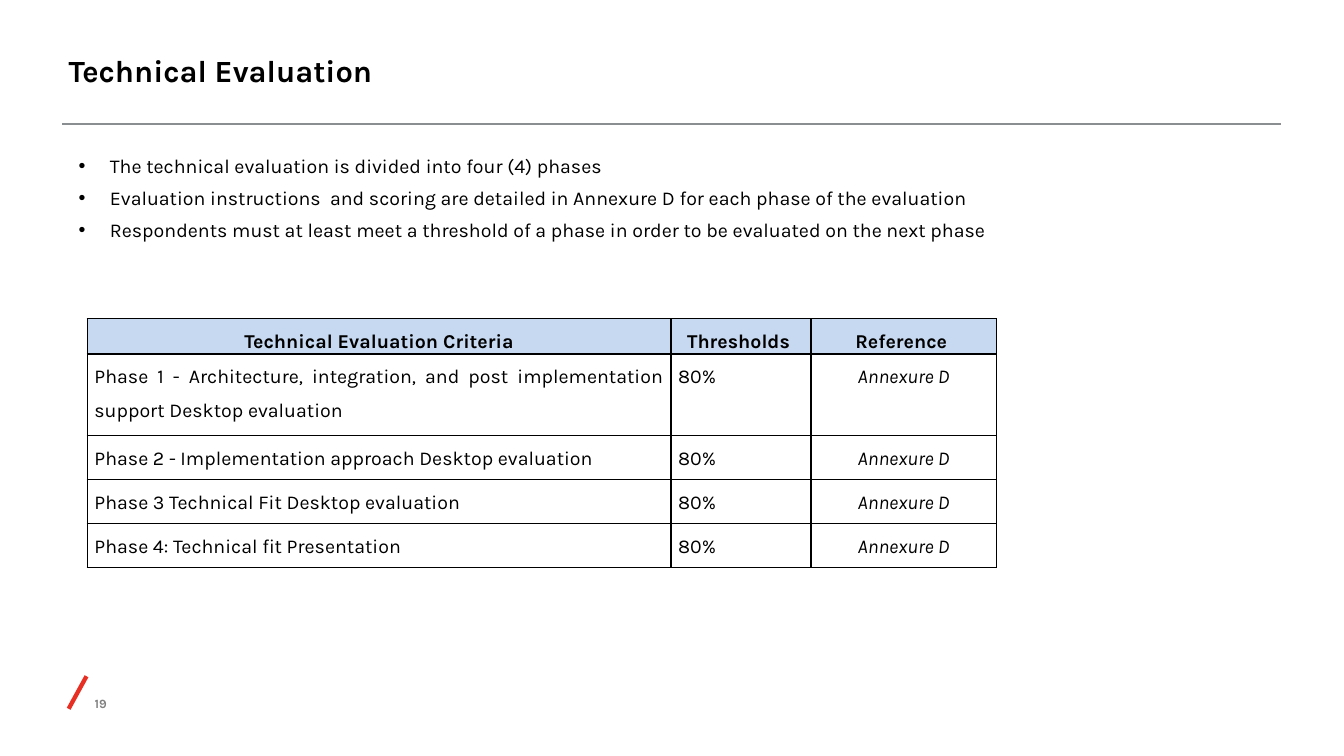
from lxml.etree import SubElement
from pptx import Presentation
from pptx.dml.color import RGBColor
from pptx.enum.shapes import MSO_CONNECTOR
from pptx.enum.text import MSO_ANCHOR, PP_ALIGN
from pptx.oxml.ns import qn
from pptx.util import Cm, Pt

# Content
TITLE = "Technical Evaluation"
BULLETS = [
    "The technical evaluation is divided into four (4) phases",
    "Evaluation instructions  and scoring are detailed in Annexure D for each phase of the evaluation",
    "Respondents must at least meet a threshold of a phase in order to be evaluated on the next phase",
]
HEADER = ("Technical Evaluation Criteria", "Thresholds ", "Reference ")
PHASES = [
    "Phase 1 - Architecture, integration, and post implementation support Desktop evaluation",
    "Phase 2 - Implementation approach Desktop evaluation",
    "Phase 3 Technical Fit Desktop evaluation",
    "Phase 4: Technical fit Presentation",
]
ROWS = [HEADER] + [(phase, "80%", "Annexure D") for phase in PHASES]
PAGE = "19"

FONT = "Karla"
COLORS = {"text": "000000", "page": "808080", "rule": "8B8E91",
          "slash": "E73023", "header": "C6D9F1", "border": "000000"}
COL_WIDTHS = (14.71, 3.53, 4.67)
ROW_HEIGHTS = (0.86, 2.06, 1.11, 1.11, 1.11)


def rgb(name):
    return RGBColor.from_string(COLORS[name])


def add_run(p, text, size, color="text", bold=False, italic=False):
    r = p.add_run()
    r.text = text
    r.font.name, r.font.size = FONT, Pt(size)
    r.font.bold, r.font.italic = bold, italic
    r.font.color.rgb = rgb(color)


def set_margins(tf, left=0, top=0, right=0, bottom=0):
    tf.margin_left, tf.margin_top = Cm(left), Cm(top)
    tf.margin_right, tf.margin_bottom = Cm(right), Cm(bottom)


def add_line(s, x1, y1, x2, y2, color, width):
    line = s.shapes.add_connector(MSO_CONNECTOR.STRAIGHT, Cm(x1), Cm(y1), Cm(x2), Cm(y2))
    line.line.color.rgb = rgb(color)
    line.line.width = Pt(width)
    SubElement(line._element.spPr, qn("a:effectLst"))


def add_borders(cell):
    tcPr = cell._tc.get_or_add_tcPr()
    for side in ("lnL", "lnR", "lnT", "lnB"):
        ln = SubElement(tcPr, qn(f"a:{side}"), w=str(Pt(1)))
        fill = SubElement(ln, qn("a:solidFill"))
        SubElement(fill, qn("a:srgbClr"), val=COLORS["border"])


prs = Presentation()
prs.slide_width, prs.slide_height = Cm(33.87), Cm(19.05)
s = prs.slides.add_slide(prs.slide_layouts[5])

# Title
title = s.shapes.title
title.left, title.top, title.width, title.height = Cm(1.73), Cm(0.76), Cm(29.06), Cm(2.01)
tf = title.text_frame
tf.vertical_anchor = MSO_ANCHOR.MIDDLE
set_margins(tf)
p = tf.paragraphs[0]
p.alignment = PP_ALIGN.LEFT
add_run(p, TITLE, 22, bold=True)

# Rule under the title and red slash in the footer
add_line(s, 1.57, 3.12, 32.28, 3.12, "rule", 1.65)
add_line(s, 1.73, 17.86, 2.18, 17.04, "slash", 3.05)

# Page number
tf = s.shapes.add_textbox(Cm(1.24), Cm(17.48), Cm(1.45), Cm(0.58)).text_frame
tf.word_wrap = True
tf.vertical_anchor = MSO_ANCHOR.BOTTOM
set_margins(tf, bottom=0.13)
p = tf.paragraphs[0]
p.alignment = PP_ALIGN.RIGHT
add_run(p, PAGE, 9, "page", bold=True)

# Bullets
tf = s.shapes.add_textbox(Cm(1.73), Cm(3.76), Cm(31.6), Cm(3.3)).text_frame
tf.word_wrap = True
for i, text in enumerate(BULLETS):
    p = tf.add_paragraph() if i else tf.paragraphs[0]
    p.alignment = PP_ALIGN.JUSTIFY
    if i:
        p.space_before = Pt(6)
    pPr = p._p.get_or_add_pPr()
    pPr.set("marL", str(Cm(0.79)))
    pPr.set("indent", str(-Cm(0.79)))
    SubElement(pPr, qn("a:buFont"), typeface="Arial")
    SubElement(pPr, qn("a:buChar"), char="•")
    add_run(p, text, 14)

# Table of phases
table = s.shapes.add_table(len(ROWS), len(HEADER), Cm(2.2), Cm(8.03),
                           Cm(sum(COL_WIDTHS)), Cm(sum(ROW_HEIGHTS))).table
table.first_row = table.horz_banding = False
for col, width in zip(table.columns, COL_WIDTHS):
    col.width = Cm(width)
for row, height in zip(table.rows, ROW_HEIGHTS):
    row.height = Cm(height)

for i, values in enumerate(ROWS):
    for j, text in enumerate(values):
        cell = table.cell(i, j)
        is_header, is_reference = i == 0, j == 2
        set_margins(cell, left=0.18, right=0.18)
        cell.vertical_anchor = MSO_ANCHOR.MIDDLE if is_header else MSO_ANCHOR.TOP
        add_borders(cell)
        if is_header:
            cell.fill.solid()
            cell.fill.fore_color.rgb = rgb("header")
        else:
            cell.fill.background()
        p = cell.text_frame.paragraphs[0]
        p.alignment = PP_ALIGN.CENTER if is_header or is_reference else PP_ALIGN.JUSTIFY
        p.line_spacing, p.space_after = 1.5, Pt(3)
        add_run(p, text, 14, bold=is_header, italic=is_reference and not is_header)

prs.save("out.pptx")
